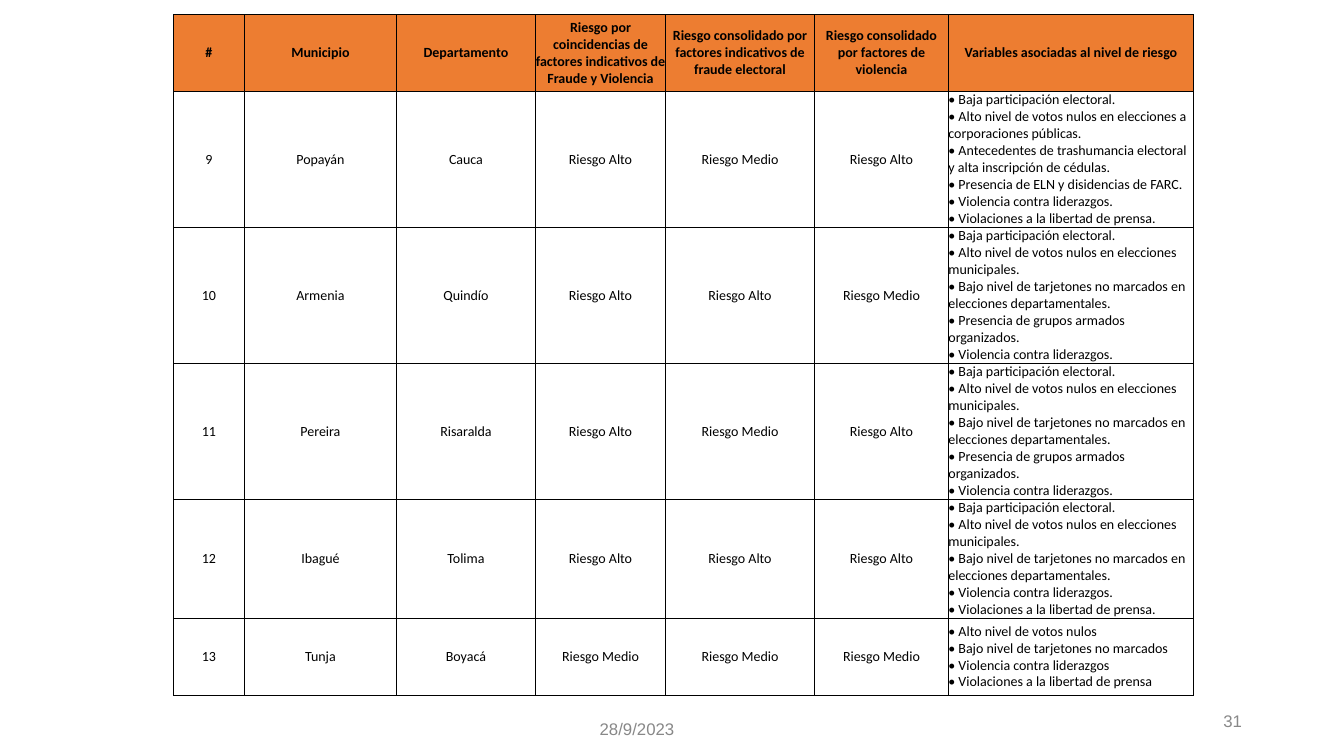
from copy import deepcopy
from dataclasses import dataclass

from lxml import etree
from pptx import Presentation
from pptx.dml.color import RGBColor
from pptx.enum import text
from pptx.oxml import ns
from pptx.util import Pt

BLACK = RGBColor(0x00, 0x00, 0x00)
ORANGE = RGBColor(0xED, 0x7D, 0x31)
GRAY = RGBColor(0x88, 0x88, 0x88)
CENTER, LEFT, RIGHT = text.PP_ALIGN.CENTER, text.PP_ALIGN.LEFT, text.PP_ALIGN.RIGHT
MIDDLE = text.MSO_ANCHOR.MIDDLE

COLUMN_WIDTHS = [50.7, 108.6, 99.3, 92.9, 106.4, 95.7, 175]
HEADINGS = [
    "#", "Municipio", "Departamento",
    "Riesgo por coincidencias de factores indicativos de Fraude y Violencia",
    "Riesgo consolidado por factores indicativos de fraude electoral",
    "Riesgo consolidado por factores de violencia",
    "Variables asociadas al nivel de riesgo",
]
HEADING_HEIGHT = 55

# Risk variables shared by several towns
LOW_TURNOUT = "• Baja participación electoral."
NULL_VOTES = "• Alto nivel de votos nulos en elecciones municipales."
UNMARKED = "• Bajo nivel de tarjetones no marcados en elecciones departamentales."
ARMED_GROUPS = "• Presencia de grupos armados organizados."
LEADERS = "• Violencia contra liderazgos."
PRESS = "• Violaciones a la libertad de prensa."
COFFEE_REGION = [[LOW_TURNOUT, NULL_VOTES, UNMARKED, ARMED_GROUPS, LEADERS]]
HIGH, MEDIUM = "Riesgo Alto", "Riesgo Medio"


@dataclass
class Town:
    number: int
    name: str
    department: str
    risks: tuple[str, str, str]
    variables: list[list[str]]  # paragraphs, each a list of lines
    height: float


@dataclass
class Footer:
    label: str
    left: float
    top: float
    align: text.PP_ALIGN


TOWNS = [
    Town(9, "Popayán", "Cauca", (HIGH, MEDIUM, HIGH), [[
        LOW_TURNOUT,
        "• Alto nivel de votos nulos en elecciones a corporaciones públicas.",
        "• Antecedentes de trashumancia electoral y alta inscripción de cédulas.",
        "• Presencia de ELN y disidencias de FARC.",
        LEADERS, PRESS]], 88),
    Town(10, "Armenia", "Quindío", (HIGH, HIGH, MEDIUM), COFFEE_REGION, 88),
    Town(11, "Pereira", "Risaralda", (HIGH, MEDIUM, HIGH), COFFEE_REGION, 88),
    Town(12, "Ibagué", "Tolima", (HIGH, HIGH, HIGH),
         [[LOW_TURNOUT, NULL_VOTES, UNMARKED, LEADERS, PRESS]], 81),
    Town(13, "Tunja", "Boyacá", (MEDIUM, MEDIUM, MEDIUM), [
        ["• Alto nivel de votos nulos"],
        ["• Bajo nivel de tarjetones no marcados", "• Violencia contra liderazgos"],
        ["• Violaciones a la libertad de prensa"]], 55),
]
FOOTERS = [
    Footer("31", 678.24, 500.4, RIGHT),
    Footer("28/9/2023", 347.04, 506.16, CENTER),
]


def format_text(frame, font_name: str, size: float, color: RGBColor,
                align: text.PP_ALIGN, bold: bool = False) -> None:
    for para in frame.paragraphs:
        para.alignment = align
        for span in para.runs:
            span.font.name = font_name
            span.font.size = Pt(size)
            span.font.bold = bold
            span.font.color.rgb = color
        # Line breaks take the size of the text around them
        for line_break in para._p.findall(ns.qn("a:br")):
            line_break.append(deepcopy(para.runs[0]._r.rPr))


def add_borders(cell) -> None:
    properties = cell._tc.get_or_add_tcPr()
    for position, side in enumerate(("lnL", "lnR", "lnT", "lnB")):
        line = etree.Element(ns.qn(f"a:{side}"), w=str(Pt(0.75)))
        fill = etree.SubElement(line, ns.qn("a:solidFill"))
        etree.SubElement(fill, ns.qn("a:srgbClr"), val=str(BLACK))
        properties.insert(position, line)


def fill_cell(cell, content: str, align: text.PP_ALIGN, heading: bool) -> None:
    cell.margin_left = cell.margin_right = cell.margin_top = cell.margin_bottom = 0
    cell.vertical_anchor = MIDDLE
    if heading:
        cell.fill.solid()
        cell.fill.fore_color.rgb = ORANGE
    else:
        cell.fill.background()
    add_borders(cell)
    cell.text_frame.text = content
    format_text(cell.text_frame, "Calibri", 10, BLACK, align, heading)


def add_risk_table(page) -> None:
    heights = [HEADING_HEIGHT] + [town.height for town in TOWNS]
    table = page.shapes.add_table(
        len(heights), len(COLUMN_WIDTHS), Pt(123.9), Pt(10.4),
        Pt(sum(COLUMN_WIDTHS)), Pt(sum(heights))).table
    table.first_row = table.horz_banding = False
    for column, width in zip(table.columns, COLUMN_WIDTHS):
        column.width = Pt(width)
    for row, height in zip(table.rows, heights):
        row.height = Pt(height)

    for cell, heading in zip(table.rows[0].cells, HEADINGS):
        fill_cell(cell, heading, CENTER, True)
    for row, town in zip(list(table.rows)[1:], TOWNS):
        *facts, variables = row.cells
        values = (str(town.number), town.name, town.department, *town.risks)
        for cell, value in zip(facts, values):
            fill_cell(cell, value, CENTER, False)
        # "\v" breaks a line, "\n" starts a paragraph
        content = "\n".join("\v".join(lines) for lines in town.variables)
        fill_cell(variables, content, LEFT, False)


def add_footer(page, footer: Footer) -> None:
    box = page.shapes.add_textbox(Pt(footer.left), Pt(footer.top), Pt(216), Pt(28.8))
    frame = box.text_frame
    frame.word_wrap = True
    frame.vertical_anchor = MIDDLE
    frame.text = footer.label
    format_text(frame, "Arial", 12, GRAY, footer.align)


def main() -> None:
    deck = Presentation()
    deck.slide_width, deck.slide_height = Pt(960), Pt(540)
    page = deck.slides.add_slide(deck.slide_layouts[6])
    add_risk_table(page)
    for footer in FOOTERS:
        add_footer(page, footer)
    deck.save("out.pptx")


if __name__ == "__main__":
    main()
